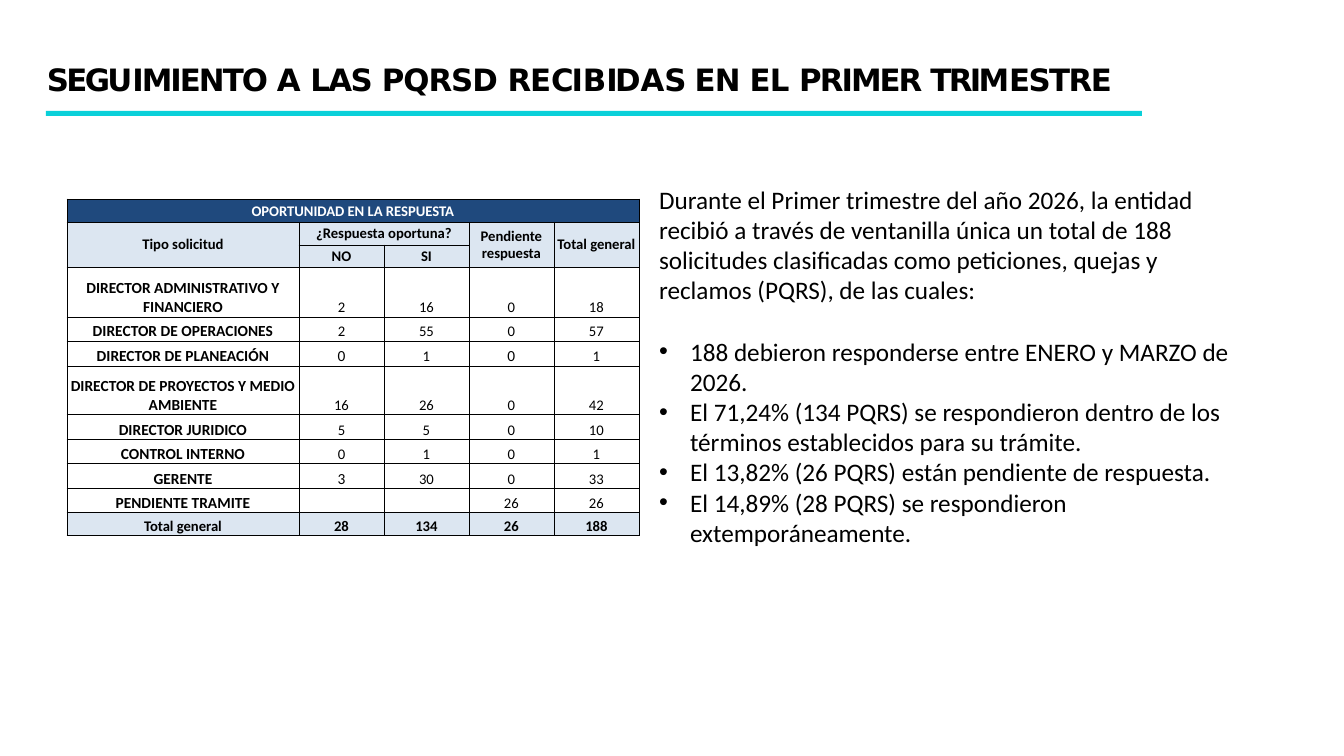
from lxml import etree
from pptx import Presentation
from pptx import util as u
from pptx.dml.color import RGBColor
from pptx.enum import shapes, text
from pptx.oxml import ns

SCALE = u.Inches(1) / 100.8
BLACK = RGBColor(0x00, 0x00, 0x00)
WHITE = RGBColor(0xFF, 0xFF, 0xFF)
CYAN = RGBColor(0x0A, 0xD0, 0xD9)
NAVY = RGBColor(0x1F, 0x49, 0x7D)
PALE_BLUE = RGBColor(0xDC, 0xE6, 0xF1)

TITLE_SPACING = [
    ("SEGU", -190), ("IMIENTO ", -140), ("A ", -70), ("LAS ", -110),
    ("PQRSD ", -70), ("RE", -80), ("CI", -160), ("B", -200), ("ID", -190),
    ("A", -220), ("S ", -190), ("EN EL ", -60), ("PRIMER", -140),
    (" TRIM", -190), ("ESTRE", -110),
]
INTRO = (
    "Durante el Primer trimestre del año 2026, la entidad recibió a través de "
    "ventanilla única un total de 188 solicitudes clasificadas como peticiones, "
    "quejas y reclamos (PQRS), de las cuales:"
)
FINDINGS = [
    "188 debieron responderse entre ENERO y MARZO de 2026.",
    "El 71,24% (134 PQRS) se respondieron dentro de los términos establecidos para su trámite.",
    "El 13,82% (26 PQRS) están pendiente de respuesta.",
    "El 14,89% (28 PQRS) se respondieron extemporáneamente.",
]
HEADINGS = [
    ["OPORTUNIDAD EN LA RESPUESTA", "", "", "", ""],
    ["Tipo solicitud", "¿Respuesta oportuna?", "", "Pendiente respuesta", "Total general"],
    ["", "NO", "SI", "", ""],
]
REQUESTS = [
    ["DIRECTOR ADMINISTRATIVO Y FINANCIERO", "2", "16", "0", "18"],
    ["DIRECTOR DE OPERACIONES", "2", "55", "0", "57"],
    ["DIRECTOR DE PLANEACIÓN", "0", "1", "0", "1"],
    ["DIRECTOR DE PROYECTOS Y MEDIO AMBIENTE", "16", "26", "0", "42"],
    ["DIRECTOR JURIDICO", "5", "5", "0", "10"],
    ["CONTROL INTERNO", "0", "1", "0", "1"],
    ["GERENTE", "3", "30", "0", "33"],
    ["PENDIENTE TRAMITE", "", "", "26", "26"],
]
TOTALS = ["Total general", "28", "134", "26", "188"]
MERGES = [(0, 0, 0, 4), (1, 0, 2, 0), (1, 1, 1, 2), (1, 3, 2, 3), (1, 4, 2, 4)]
COLUMN_WIDTHS = [232, 85, 85, 85, 85]
ROW_HEIGHTS = [23, 23, 22, 50, 24, 25, 49, 25, 24, 25, 24, 23]
LARGER_COUNTS = {(5, 1), (5, 3), (9, 1)}


def px(length):
    return u.Emu(round(length * SCALE))


def place(part, box):
    part.left, part.top, part.width, part.height = map(px, box)


def format_run(run, font, size, color, bold=False):
    run.font.name = font
    run.font.size = u.Pt(size)
    run.font.color.rgb = color
    run.font.bold = bold


def add_heading(slide, box):
    left, top, width, height = box
    heading = slide.shapes.title
    place(heading, (left, top, width, height))
    frame = heading.text_frame
    frame.auto_size = text.MSO_AUTO_SIZE.NONE
    frame.vertical_anchor = text.MSO_ANCHOR.TOP
    frame.margin_left = frame.margin_top = px(1)
    frame.margin_right = frame.margin_bottom = 0
    line = frame.paragraphs[0]
    line.alignment = text.PP_ALIGN.LEFT
    for words, spacing in TITLE_SPACING:
        run = line.add_run()
        run.text = words
        format_run(run, "DejaVu Sans", 22, BLACK, True)
        run._r.get_or_add_rPr().set("spc", str(spacing))
    rule = slide.shapes.add_shape(
        shapes.MSO_SHAPE.RECTANGLE, px(left), px(top + 51), px(width - 59), px(5))
    rule.shadow.inherit = False
    rule.fill.solid()
    rule.fill.fore_color.rgb = CYAN
    rule.line.fill.background()


def add_findings(slide, box):
    findings = slide.placeholders[1]
    place(findings, box)
    frame = findings.text_frame
    frame.word_wrap = True
    frame.auto_size = text.MSO_AUTO_SIZE.NONE
    frame.vertical_anchor = text.MSO_ANCHOR.TOP
    frame.text = "\n".join([INTRO] + FINDINGS)
    for index, line in enumerate(frame.paragraphs):
        properties = line._p.get_or_add_pPr()
        indent = px(31) if index else 0
        properties.set("marL", str(indent))
        properties.set("indent", str(-indent))
        if index:
            etree.SubElement(properties, ns.qn("a:buFont"), typeface="Arial")
            etree.SubElement(properties, ns.qn("a:buChar"), char="•")
        else:
            etree.SubElement(properties, ns.qn("a:buNone"))
        line.alignment = text.PP_ALIGN.LEFT
        line.line_spacing = 1.0
        line.space_before = u.Pt(22 if index == 1 else 0)
        line.space_after = u.Pt(0)
        format_run(line.runs[0], "Calibri", 18, BLACK)


def outline_cell(cell):
    properties = cell._tc.get_or_add_tcPr()
    for side in ("a:lnL", "a:lnR", "a:lnT", "a:lnB"):
        edge = etree.SubElement(properties, ns.qn(side), w=str(u.Pt(0.5)))
        paint = etree.SubElement(edge, ns.qn("a:solidFill"))
        etree.SubElement(paint, ns.qn("a:srgbClr"), val=str(BLACK))


def format_cell(cell, row, column, words):
    is_heading = row < len(HEADINGS)
    is_total = row == len(ROW_HEIGHTS) - 1
    outline_cell(cell)
    if is_heading or is_total:
        cell.fill.solid()
        cell.fill.fore_color.rgb = PALE_BLUE if row else NAVY
    else:
        cell.fill.background()
    cell.margin_left = cell.margin_right = cell.margin_top = px(1)
    cell.margin_bottom = 0
    cell.vertical_anchor = text.MSO_ANCHOR.MIDDLE if is_heading else text.MSO_ANCHOR.BOTTOM
    line = cell.text_frame.paragraphs[0]
    line.alignment = text.PP_ALIGN.CENTER
    if not words:
        etree.SubElement(line._p, ns.qn("a:endParaRPr"), sz="1050")
        return
    line.text = words
    is_requester = column == 0 and not is_heading and not is_total
    size = 11 if is_requester or (row, column) in LARGER_COUNTS else 10.5
    format_run(line.runs[0], "Calibri", size, BLACK if row else WHITE,
               is_heading or is_total or column == 0)


def add_response_table(slide, box):
    rows = HEADINGS + REQUESTS + [TOTALS]
    responses = slide.shapes.add_table(len(rows), len(COLUMN_WIDTHS), *map(px, box)).table
    responses.first_row = False
    responses.horz_banding = False
    for column, width in zip(responses.columns, COLUMN_WIDTHS):
        column.width = px(width)
    for row, height in zip(responses.rows, ROW_HEIGHTS):
        row.height = px(height)
    for top, left, bottom, right in MERGES:
        responses.cell(top, left).merge(responses.cell(bottom, right))
    for row, entries in enumerate(rows):
        for column, words in enumerate(entries):
            format_cell(responses.cell(row, column), row, column, words)


def main():
    deck = Presentation()
    deck.slide_width, deck.slide_height = px(1344), px(756)
    slide = deck.slides.add_slide(deck.slide_layouts[1])
    add_heading(slide, (46, 60, 1155, 38))
    add_findings(slide, (649, 179, 602, 377))
    add_response_table(slide, (67, 199, sum(COLUMN_WIDTHS), sum(ROW_HEIGHTS)))
    deck.save("out.pptx")


if __name__ == "__main__":
    main()
